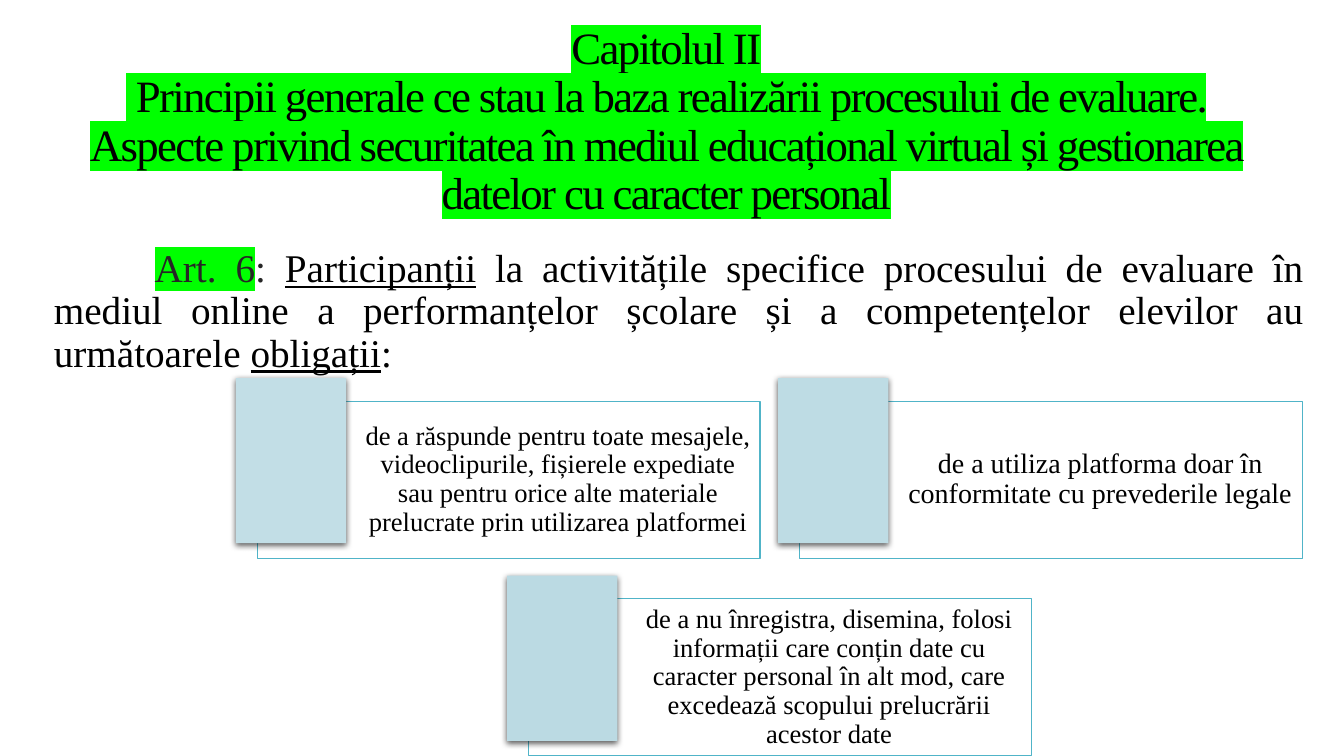
from lxml.etree import SubElement
from pptx import Presentation
from pptx.dml.color import RGBColor
from pptx.enum.shapes import MSO_SHAPE
from pptx.enum.text import MSO_ANCHOR, PP_ALIGN
from pptx.oxml.ns import qn
from pptx.util import Pt

FONT = "Times New Roman"
COLORS = {"black": "000000", "grey": "262626", "green": "00FF00",
          "white": "FFFFFF", "teal": "50B4C8"}

TITLE = ("Capitolul II\v Principii generale ce stau la baza realizării procesului "
         "de evaluare. Aspecte privind securitatea în mediul educațional virtual "
         "și gestionarea datelor cu caracter personal")

# text, color, underlined, highlighted
ARTICLE = [
    ("Art. 6", "grey", False, True),
    (": ", "grey", False, False),
    ("Participanții", "black", True, False),
    (" la activitățile specifice procesului de evaluare în mediul online a "
     "performanțelor școlare și a competențelor elevilor au următoarele ",
     "black", False, False),
    ("obligații", "black", True, False),
    (":", "black", False, False),
]

# text, size, bar color, column, row
DUTIES = [
    ("de a răspunde pentru toate mesajele, videoclipurile, fișierele expediate sau "
     "pentru orice alte materiale prelucrate prin utilizarea platformei",
     19, "C2DEE6", 0, 0),
    ("de a utiliza platforma doar în conformitate cu prevederile legale",
     20, "BEDCE4", 1, 0),
    ("de a nu înregistra, disemina, folosi informații care conțin date cu caracter "
     "personal în alt mod, care excedează scopului prelucrării acestor date",
     19, "BBDAE3", 0.5, 1),
]
BAR_LEFT, BAR_TOP, BAR_WIDTH, BAR_HEIGHT = 168.5, 270, 78.8, 118
PANEL_WIDTH, PANEL_HEIGHT = 359.3, 112.3
PANEL_SHIFT_X, PANEL_SHIFT_Y = 15.1, 16.5
COLUMN_STEP, ROW_STEP = 387.4, 141.2


def rgb(color):
    return RGBColor.from_string(color)


def style(span, size, color):
    span.font.name = FONT
    span.font.size = Pt(size)
    span.font.color.rgb = rgb(color)


def highlight(span):
    mark = SubElement(span.font._element, qn("a:highlight"))
    SubElement(mark, qn("a:srgbClr"), val=COLORS["green"])
    # The schema wants the highlight before the typeface.
    span.font._element.find(qn("a:latin")).addprevious(mark)


def add_text_box(page, left, top, width, height):
    frame = page.shapes.add_textbox(Pt(left), Pt(top), Pt(width), Pt(height)).text_frame
    frame.word_wrap = True
    return frame


def add_rectangle(page, left, top, width, height, fill):
    box = page.shapes.add_shape(MSO_SHAPE.RECTANGLE, Pt(left), Pt(top), Pt(width), Pt(height))
    box.shadow.inherit = False
    box.fill.solid()
    box.fill.fore_color.rgb = rgb(fill)
    return box


def add_drop_shadow(box):
    effects = box._element.spPr.find(qn("a:effectLst"))
    shadow = SubElement(effects, qn("a:outerShdw"), blurRad=str(Pt(4.5)), dist=str(Pt(1.5)),
                        dir="5400000", algn="ctr", rotWithShape="0")
    color = SubElement(shadow, qn("a:srgbClr"), val=COLORS["black"])
    SubElement(color, qn("a:alpha"), val="63000")


def add_title(page):
    frame = add_text_box(page, 52, 22, 848, 131)
    frame.margin_top = frame.margin_bottom = 0
    frame.vertical_anchor = MSO_ANCHOR.MIDDLE
    para = frame.paragraphs[0]
    para.text = TITLE
    para.alignment = PP_ALIGN.CENTER
    para.line_spacing = 0.9
    for span in para.runs:
        style(span, 32, COLORS["black"])
        span.font._element.set("spc", "-120")
        highlight(span)


def add_article(page):
    para = add_text_box(page, 31.4, 174, 907, 95).paragraphs[0]
    para.alignment = PP_ALIGN.JUSTIFY
    para.line_spacing = 0.9
    para._p.get_or_add_pPr().set("indent", str(Pt(72)))
    for text, color, underlined, marked in ARTICLE:
        span = para.add_run()
        span.text = text
        style(span, 28, COLORS[color])
        span.font.underline = underlined
        if marked:
            highlight(span)


def add_duty(page, text, size, bar_color, column, row):
    left = BAR_LEFT + column * COLUMN_STEP
    top = BAR_TOP + row * ROW_STEP
    panel = add_rectangle(page, left + PANEL_SHIFT_X, top + PANEL_SHIFT_Y,
                          PANEL_WIDTH, PANEL_HEIGHT, COLORS["white"])
    panel.line.color.rgb = rgb(COLORS["teal"])
    panel.line.width = Pt(0.75)
    frame = panel.text_frame
    frame.word_wrap = True
    frame.vertical_anchor = MSO_ANCHOR.MIDDLE
    frame.margin_left = Pt(76.3)
    frame.margin_right = frame.margin_top = frame.margin_bottom = Pt(5.8)
    para = frame.paragraphs[0]
    para.text = text
    para.alignment = PP_ALIGN.CENTER
    para.line_spacing = 0.9
    style(para.runs[0], size, COLORS["black"])

    bar = add_rectangle(page, left, top, BAR_WIDTH, BAR_HEIGHT, bar_color)
    bar.line.fill.background()
    add_drop_shadow(bar)


def main():
    deck = Presentation()
    deck.slide_width, deck.slide_height = Pt(960), Pt(540)
    page = deck.slides.add_slide(deck.slide_layouts[6])
    add_title(page)
    add_article(page)
    for duty in DUTIES:
        add_duty(page, *duty)
    deck.save("out.pptx")


if __name__ == "__main__":
    main()
